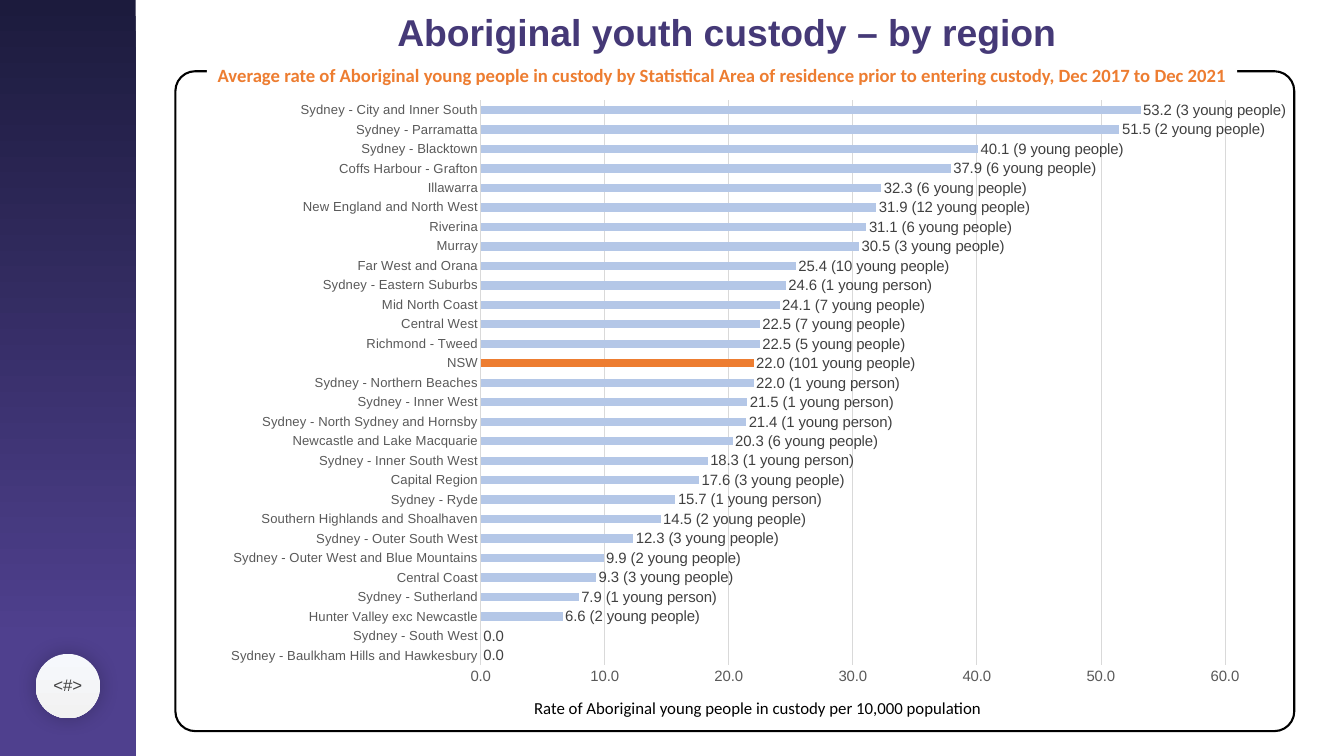
import lxml.etree
import pptx
import pptx.chart.data
import pptx.dml.color
import pptx.enum.chart
import pptx.enum.shapes
import pptx.enum.text
import pptx.oxml
import pptx.oxml.ns
import pptx.util

COLORS = {
    "night": "1C1B3D", "violet": "4F408E", "title": "453977",
    "badge_top": "F6F8FC", "badge_bottom": "F2F2F2",
    "black": "000000", "white": "FFFFFF", "label": "404040", "axis": "595959",
    "grid": "D9D9D9", "region": "B4C7E7", "state": "ED7D31",
}
RGB = {name: pptx.dml.color.RGBColor.from_string(value) for name, value in COLORS.items()}
SHAPES = pptx.enum.shapes.MSO_SHAPE
ALIGN = pptx.enum.text.PP_ALIGN
ANCHOR = pptx.enum.text.MSO_ANCHOR
Pt = pptx.util.Pt

deck = pptx.Presentation()
deck.slide_width = pptx.util.Inches(20)
deck.slide_height = pptx.util.Inches(11.25)
slide = deck.slides.add_slide(deck.slide_layouts[6])


def share(left, top, width, height):
    across, down = deck.slide_width / 100, deck.slide_height / 100
    return [int(part) for part in (left * across, top * down, width * across, height * down)]


def write(holder, text, size, color, font="Arial", bold=False, align=ALIGN.CENTER,
          anchor=ANCHOR.TOP, wrap=True, inset=(0.1, 0.05)):
    frame = holder.text_frame
    frame.word_wrap = wrap
    frame.vertical_anchor = anchor
    frame.margin_left = frame.margin_right = pptx.util.Inches(inset[0])
    frame.margin_top = frame.margin_bottom = pptx.util.Inches(inset[1])
    paragraph = frame.paragraphs[0]
    paragraph.alignment = align
    run = paragraph.add_run()
    run.text = text
    run.font.size, run.font.name, run.font.bold = Pt(size), font, bold
    run.font.color.rgb = RGB[color]


for kind, place, stops in (
    (SHAPES.RECTANGLE, (0, 0, 10.1, 100), ((0, "night"), (0.85, "violet"))),
    (SHAPES.OVAL, (2.65, 86.49, 4.8, 8.53), ((0, "badge_top"), (1, "badge_bottom"))),
):
    panel = slide.shapes.add_shape(kind, *share(*place))
    panel.shadow.inherit = False
    panel.line.fill.background()
    panel.fill.gradient()
    panel.fill.gradient_angle = 270
    for stop, (position, color) in zip(panel.fill.gradient_stops, stops):
        stop.position = position
        stop.color.rgb = RGB[color]

effects = panel.element.spPr.find(pptx.oxml.ns.qn("a:effectLst"))
effects.append(pptx.oxml.parse_xml(
    f'<a:outerShdw {pptx.oxml.ns.nsdecls("a")} blurRad="{Pt(22)}" dist="0" rotWithShape="0">'
    f'<a:srgbClr val="{COLORS["black"]}"><a:alpha val="24000"/></a:srgbClr></a:outerShdw>'))

page_number = slide.shapes.add_textbox(*share(2.65, 87.11, 4.8, 6.93))
write(page_number, "<#>", 18, "label", anchor=ANCHOR.MIDDLE)
title = slide.shapes.add_textbox(*share(17.05, 0.8, 74.05, 6.84))
write(title, "Aboriginal youth custody – by region", 40, "title", bold=True)

border = slide.shapes.add_shape(SHAPES.ROUNDED_RECTANGLE, *share(13.05, 9.42, 83.25, 87.29))
border.adjustments[0] = 0.03
border.shadow.inherit = False
border.fill.background()
border.line.color.rgb = RGB["black"]
border.line.width = Pt(2.25)

caption = slide.shapes.add_shape(SHAPES.RECTANGLE, *share(15.4, 7.91, 76.65, 4))
caption.shadow.inherit = False
caption.fill.solid()
caption.fill.fore_color.rgb = RGB["white"]
caption.line.fill.background()
write(caption, "Average rate of Aboriginal young people in custody by Statistical Area of residence "
      "prior to entering custody, Dec 2017 to Dec 2021",
      20, "state", font="Calibri", bold=True, inset=(0.11, 0.06))

regions = [
    ("Sydney - Baulkham Hills and Hawkesbury", 0, 0),
    ("Sydney - South West", 0, 0),
    ("Hunter Valley exc Newcastle", 6.6, 2),
    ("Sydney - Sutherland", 7.9, 1),
    ("Central Coast", 9.3, 3),
    ("Sydney - Outer West and Blue Mountains", 9.9, 2),
    ("Sydney - Outer South West", 12.3, 3),
    ("Southern Highlands and Shoalhaven", 14.5, 2),
    ("Sydney - Ryde", 15.7, 1),
    ("Capital Region", 17.6, 3),
    ("Sydney - Inner South West", 18.3, 1),
    ("Newcastle and Lake Macquarie", 20.3, 6),
    ("Sydney - North Sydney and Hornsby", 21.4, 1),
    ("Sydney - Inner West", 21.5, 1),
    ("Sydney - Northern Beaches", 22, 1),
    ("NSW", 22, 101),
    ("Richmond - Tweed", 22.5, 5),
    ("Central West", 22.5, 7),
    ("Mid North Coast", 24.1, 7),
    ("Sydney - Eastern Suburbs", 24.6, 1),
    ("Far West and Orana", 25.4, 10),
    ("Murray", 30.5, 3),
    ("Riverina", 31.1, 6),
    ("New England and North West", 31.9, 12),
    ("Illawarra", 32.3, 6),
    ("Coffs Harbour - Grafton", 37.9, 6),
    ("Sydney - Blacktown", 40.1, 9),
    ("Sydney - Parramatta", 51.5, 2),
    ("Sydney - City and Inner South", 53.2, 3),
]
rates = pptx.chart.data.CategoryChartData(number_format="0.0")
rates.categories = [name for name, rate, people in regions]
rates.add_series("Series 1", [rate for name, rate, people in regions])
chart = slide.shapes.add_chart(pptx.enum.chart.XL_CHART_TYPE.BAR_CLUSTERED,
                               *share(13.7, 11.91, 82.65, 80.27), rates).chart
chart.has_legend = False
chart.has_title = False
chart.font.size, chart.font.name = Pt(10), "Calibri"
chart.font.color.rgb = RGB["black"]

plot_layout = "".join(f'<c:{tag} val="{value}"/>' for tag, value in (
    ("layoutTarget", "inner"), ("xMode", "edge"), ("yMode", "edge"),
    ("x", 0.267), ("y", 0.017), ("w", 0.67), ("h", 0.931)))
plot_area = chart.element.chart.plotArea
for automatic in plot_area.findall(pptx.oxml.ns.qn("c:layout")):
    plot_area.remove(automatic)
plot_area.insert(0, pptx.oxml.parse_xml(
    f'<c:layout {pptx.oxml.ns.nsdecls("c")}><c:manualLayout>{plot_layout}</c:manualLayout></c:layout>'))

for axis, size in ((chart.category_axis, 14), (chart.value_axis, 16)):
    axis.major_tick_mark = axis.minor_tick_mark = pptx.enum.chart.XL_TICK_MARK.NONE
    axis.tick_labels.font.size, axis.tick_labels.font.name = Pt(size), "Arial"
    axis.tick_labels.font.color.rgb = RGB["axis"]
chart.category_axis.has_major_gridlines = False
chart.value_axis.has_major_gridlines = True
for rule in (chart.category_axis.format.line, chart.value_axis.major_gridlines.format.line):
    rule.color.rgb = RGB["grid"]
    rule.width = Pt(0.75)
chart.value_axis.format.line.fill.background()
chart.value_axis.minimum_scale, chart.value_axis.maximum_scale = 0, 60
chart.value_axis.major_unit = 10
chart.value_axis.tick_labels.number_format = "0.0"
chart.value_axis.tick_labels.number_format_is_linked = False

bars = chart.plots[0]
bars.gap_width, bars.overlap, bars.vary_by_categories = 135, -15, False
rate_series = bars.series[0]
rate_series.invert_if_negative = False
rate_series.format.fill.solid()
rate_series.format.fill.fore_color.rgb = RGB["region"]

outside = pptx.enum.chart.XL_LABEL_POSITION.OUTSIDE_END
labels = rate_series.data_labels
labels.show_value = True
labels.position = outside
labels.number_format, labels.number_format_is_linked = "0.0", False
labels.font.size, labels.font.name = Pt(16), "Arial"
labels.font.color.rgb = RGB["label"]

for index, (name, rate, people) in enumerate(regions):
    point = rate_series.points[index]
    if name == "NSW":
        point.format.fill.solid()
        point.format.fill.fore_color.rgb = RGB["state"]
    if people:
        noun = "person" if people == 1 else "people"
        write(point.data_label, f"{rate:.1f} ({people} young {noun})", 16, "label", wrap=False)
        point.data_label.position = outside

axis_title = slide.shapes.add_textbox(*share(39.25, 91.91, 34.7, 3.56))
write(axis_title, "Rate of Aboriginal young people in custody per 10,000 population",
      18, "black", font="Calibri", align=ALIGN.LEFT, wrap=False)

deck.save("out.pptx")
